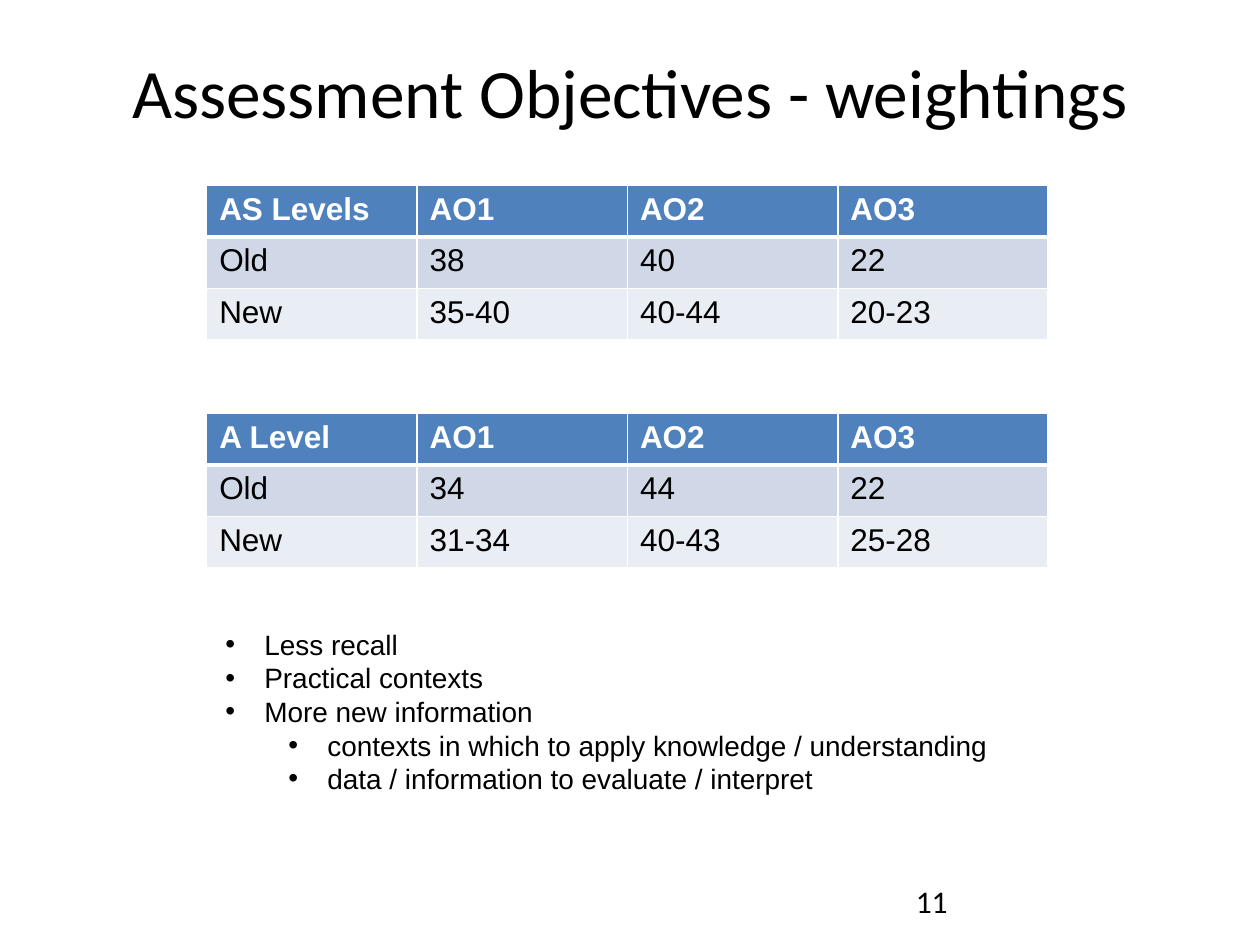
from pptx import Presentation
from pptx import util as u
from pptx.dml.color import RGBColor
from pptx.enum import text
from pptx.oxml.ns import qn
from lxml import etree

COLORS = {"header": "4F81BD", "old": "D0D8E8", "new": "E9EDF4",
          "white": "FFFFFF", "black": "000000"}
LEFT, COLUMN, ROW = 1.64, 1.67, 0.41
TABLES = [
    (1.47, [["AS Levels", "AO1", "AO2", "AO3"],
            ["Old", "38", "40", "22"],
            ["New", "35-40", "40-44", "20-23"]]),
    (3.28, [["A Level", "AO1", "AO2", "AO3"],
            ["Old", "34", "44", "22"],
            ["New", "31-34", "40-43", "25-28"]]),
]
BULLETS = [
    (0, "Less recall"),
    (0, "Practical contexts"),
    (0, "More new information"),
    (1, "contexts in which to apply knowledge / understanding"),
    (1, "data / information to evaluate / interpret"),
]


def set_font(paragraph, name, size, color="black", bold=False):
    paragraph.font.name = name
    paragraph.font.size = u.Pt(size)
    paragraph.font.bold = bold
    paragraph.font.color.rgb = RGBColor.from_string(COLORS[color])


def add_border(cell, side, points):
    """Draw one white cell edge; call before the cell's fill is set."""
    properties = cell._tc.get_or_add_tcPr()
    line = etree.SubElement(properties, qn(f"a:ln{side}"), w=str(u.Pt(points)))
    fill = etree.SubElement(line, qn("a:solidFill"))
    etree.SubElement(fill, qn("a:srgbClr"), val=COLORS["white"])


presentation = Presentation()
presentation.slide_width, presentation.slide_height = u.Inches(10), u.Inches(7.5)
slide = presentation.slides.add_slide(presentation.slide_layouts[5])

# Title
title = slide.shapes.title
title.left, title.top = u.Inches(0.5), u.Inches(0.21)
title.width, title.height = u.Inches(9), u.Inches(1.02)
title.text_frame.text = "Assessment Objectives - weightings"
title.text_frame.vertical_anchor = text.MSO_ANCHOR.MIDDLE
title.text_frame.paragraphs[0].alignment = text.PP_ALIGN.CENTER
set_font(title.text_frame.paragraphs[0], "Calibri", 39.6)

# Weighting tables
for top, rows in TABLES:
    table = slide.shapes.add_table(
        len(rows), len(rows[0]), u.Inches(LEFT), u.Inches(top),
        u.Inches(COLUMN * len(rows[0])), u.Inches(ROW * len(rows))).table
    for r, (values, fill) in enumerate(zip(rows, ("header", "old", "new"))):
        is_header = r == 0
        for c, value in enumerate(values):
            cell = table.cell(r, c)
            cell.text = value
            set_font(cell.text_frame.paragraphs[0], "Arial", 18,
                     "white" if is_header else "black", is_header)
            for side in "LRTB":
                thick = (r, side) in ((0, "B"), (1, "T"))
                add_border(cell, side, 3 if thick else 1)
            cell.fill.solid()
            cell.fill.fore_color.rgb = RGBColor.from_string(COLORS[fill])

# Slide number
number = slide.shapes.add_textbox(u.Inches(7.17), u.Inches(6.95),
                                  u.Inches(2.33), u.Inches(0.4))
number.text_frame.word_wrap = True
number.text_frame.text = "11"
set_font(number.text_frame.paragraphs[0], "Calibri", 18)

# Consequences
notes = slide.shapes.add_textbox(u.Inches(1.69), u.Inches(4.93),
                                 u.Inches(6.54), u.Inches(1.57))
notes.text_frame.word_wrap = True
notes.text_frame.text = "\n".join(line for _, line in BULLETS)
for paragraph, (level, _) in zip(notes.text_frame.paragraphs, BULLETS):
    paragraph.level = level
    properties = paragraph._p.get_or_add_pPr()
    properties.set("marL", str(u.Inches(0.31 + 0.5 * level)))
    properties.set("indent", str(u.Inches(-0.31)))
    etree.SubElement(properties, qn("a:buFont"), typeface="Arial")
    etree.SubElement(properties, qn("a:buChar"), char="•")
    set_font(paragraph, "Arial", 16)

presentation.save("out.pptx")
